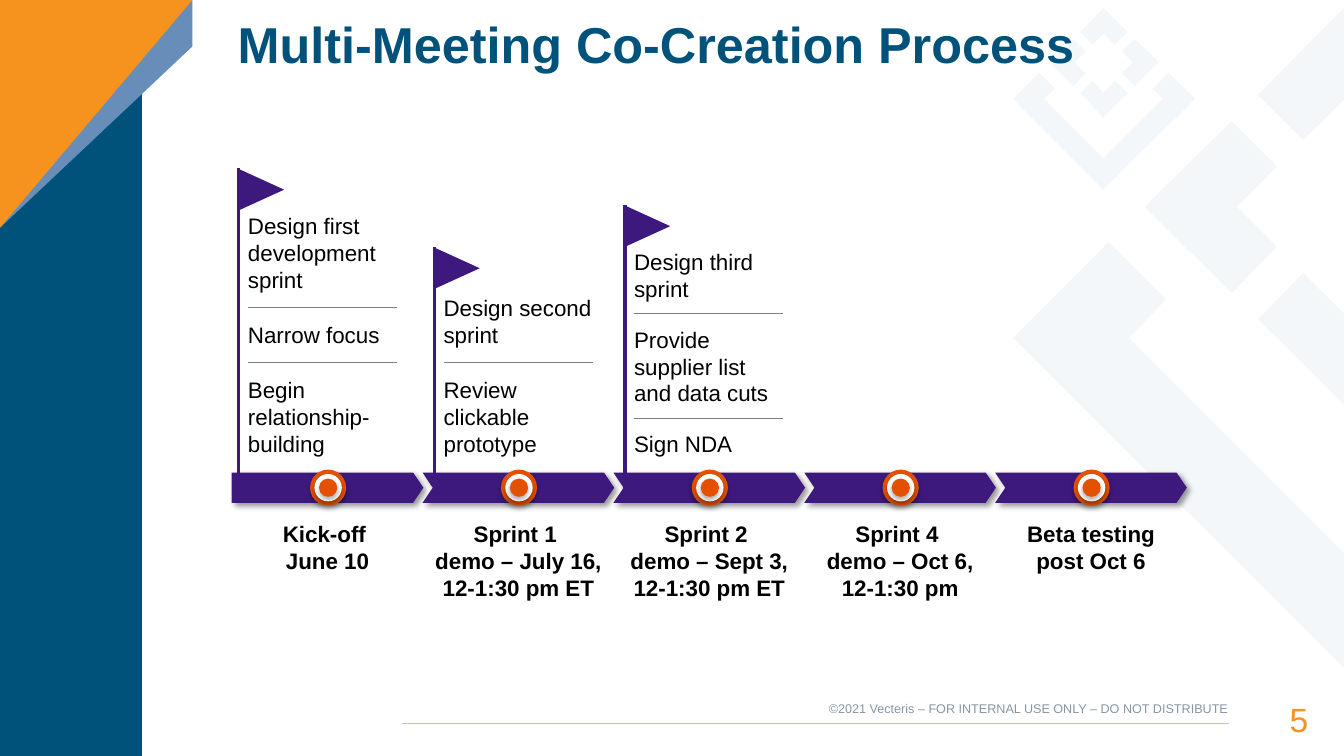
from lxml.etree import SubElement
from pptx import Presentation
from pptx.dml.color import RGBColor
from pptx.enum.shapes import MSO_CONNECTOR, MSO_SHAPE
from pptx.enum.text import MSO_ANCHOR, MSO_AUTO_SIZE, PP_ALIGN
from pptx.oxml import parse_xml
from pptx.oxml.ns import nsdecls, qn
from pptx.util import Cm, Pt

BLACK = RGBColor(0x00, 0x00, 0x00)
WHITE = RGBColor(0xFF, 0xFF, 0xFF)
NAVY = RGBColor(0x00, 0x52, 0x7B)
STEEL = RGBColor(0x66, 0x8E, 0xB8)
AMBER = RGBColor(0xF6, 0x92, 0x1E)
PALE = RGBColor(0xE9, 0xEE, 0xF4)
FOOTER_RULE = RGBColor(0xB3, 0xC6, 0xDC)
FOOTER_TEXT = RGBColor(0x87, 0x96, 0xA4)
PURPLE = RGBColor(0x3D, 0x19, 0x7D)
ORANGE = RGBColor(0xE3, 0x51, 0x00)
GREY = RGBColor(0x7F, 0x7F, 0x7F)

presentation = Presentation()
presentation.slide_width = Cm(33.87)
presentation.slide_height = Cm(19.05)
slide = presentation.slides.add_slide(presentation.slide_layouts[5])
shapes = slide.shapes


def write(box, text, size, color, align=PP_ALIGN.LEFT, bold=False):
    frame = box.text_frame
    frame.word_wrap = True
    frame.auto_size = MSO_AUTO_SIZE.NONE
    frame.margin_left = frame.margin_right = frame.margin_top = frame.margin_bottom = 0
    frame.text = text
    paragraph = frame.paragraphs[0]
    paragraph.alignment = align
    paragraph.font.name = "Arial"
    paragraph.font.size = Pt(size)
    paragraph.font.bold = bold
    paragraph.font.color.rgb = color
    return paragraph


def draw_line(x1, y1, x2, y2, color, width):
    line = shapes.add_connector(MSO_CONNECTOR.STRAIGHT, Cm(x1), Cm(y1), Cm(x2), Cm(y2))
    line.line.color.rgb = color
    line.line.width = Pt(width)
    SubElement(line._element.spPr, qn("a:effectLst"))


pale_pattern = [
    [(31.04, 3.05), (28.85, 5.21), (31.04, 7.39), (32.18, 6.22), (31.17, 5.21), (32.18, 4.19)],
    [(27.94, 6.1), (25.53, 8.51), (33.87, 16.84), (33.87, 13.94), (28.45, 8.51), (29.39, 7.54)],
    [(32.84, 6.88), (31.7, 8.05), (33.87, 10.21), (33.87, 7.9)],
    [(33.87, 0.2), (31.7, 2.39), (32.84, 3.53), (33.87, 2.51)],
    [(28.6, 0.99), (28.27, 1.3), (28.55, 1.57), (28.27, 1.85), (28.6, 2.18), (29.21, 1.57)],
    [(27.05, 0.99), (26.44, 1.57), (27.05, 2.18), (27.36, 1.85), (27.08, 1.57), (27.36, 1.3)],
    [(27.81, 0.2), (27.23, 0.81), (27.53, 1.12), (27.81, 0.84), (28.09, 1.12), (28.42, 0.81)],
    [(27.53, 2.03), (27.23, 2.36), (27.81, 2.97), (28.42, 2.36), (28.09, 2.03), (27.81, 2.34)],
    [(26.19, 1.83), (25.53, 2.49), (27.81, 4.78), (30.12, 2.49), (29.44, 1.83),
     (29.06, 2.24), (29.31, 2.49), (27.81, 3.99), (26.31, 2.49), (26.59, 2.24)],
]
backdrop = [(points, PALE) for points in pale_pattern] + [
    ([(0, 0), (3.58, 0), (3.58, 19.05), (0, 19.05)], NAVY),
    ([(0, 0), (4.85, 0), (4.85, 1.17), (0, 5.74)], STEEL),
    ([(0, 0), (4.85, 0), (0, 5.74)], AMBER),
]
for points, color in backdrop:
    corners = [(Cm(x), Cm(y)) for x, y in points]
    builder = shapes.build_freeform(*corners[0])
    builder.add_line_segments(corners[1:])
    panel = builder.convert_to_shape()
    panel.shadow.inherit = False
    panel.fill.solid()
    panel.fill.fore_color.rgb = color
    panel.line.fill.background()
    if color == PALE:
        tint = panel._element.spPr.find(qn("a:solidFill"))[0]
        SubElement(tint, qn("a:alpha")).set("val", "47000")

draw_line(10.13, 18.24, 30.96, 18.24, FOOTER_RULE, 0.82)
page_number = shapes.add_textbox(Cm(30.94), Cm(17.53), Cm(2.03), Cm(0.97))
write(page_number, "5", 24, AMBER, PP_ALIGN.RIGHT).line_spacing = 1.19
page_number.text_frame.vertical_anchor = MSO_ANCHOR.MIDDLE
copyright_line = shapes.add_textbox(Cm(20.12), Cm(17.65), Cm(10.82), Cm(0.38))
write(copyright_line, "©2021 Vecteris – FOR INTERNAL USE ONLY – DO NOT DISTRIBUTE",
      9, FOOTER_TEXT, PP_ALIGN.RIGHT)

title = shapes.title
title.left, title.top, title.width, title.height = Cm(5.99), Cm(0.33), Cm(27.86), Cm(1.73)
write(title, "Multi-Meeting Co-Creation Process", 36, NAVY, bold=True).line_spacing = 0.9
title.text_frame.vertical_anchor = MSO_ANCHOR.MIDDLE
shapes._spTree.append(title._element)

LINE_HEIGHT = 0.68
ITEM_WIDTH = 3.76
flags = [
    (6.02, 4.24, 0.71, [("Design first development sprint", 3), ("Narrow focus", 1),
                        ("Begin relationship-building", 3)]),
    (10.95, 6.22, 0.71, [("Design second sprint", 2), ("Review clickable prototype", 3)]),
    (15.75, 5.16, 0.6, [("Design third sprint", 2), ("Provide supplier list and data cuts", 3),
                        ("Sign NDA", 1)]),
]
for pole, pole_top, gap, items in flags:
    draw_line(pole, 12.32, pole, pole_top, PURPLE, 2.25)
    pennant = shapes.add_shape(MSO_SHAPE.ISOSCELES_TRIANGLE,
                               Cm(pole + 0.05), Cm(pole_top - 0.03), Cm(1.04), Cm(1.14))
    pennant.rotation = 90
    pennant.shadow.inherit = False
    pennant.fill.solid()
    pennant.fill.fore_color.rgb = PURPLE
    pennant.line.fill.background()

    item_left = pole + 0.23
    bottom = 11.53
    for position, (item, line_count) in enumerate(reversed(items)):
        if position:
            divider = bottom + gap / 2
            draw_line(item_left, divider, item_left + ITEM_WIDTH, divider, GREY, 0.75)
        height = line_count * LINE_HEIGHT
        item_box = shapes.add_textbox(Cm(item_left), Cm(bottom - height), Cm(ITEM_WIDTH), Cm(height))
        write(item_box, item, 16, BLACK)
        bottom -= height + gap

STAGE_PITCH = 4.81
stages = [
    "Kick-off \vJune 10",
    "Sprint 1 \vdemo – July 16, 12-1:30 pm ET",
    "Sprint 2 \vdemo – Sept 3, 12-1:30 pm ET",
    "Sprint 4 \vdemo – Oct 6, 12-1:30 pm",
    "Beta testing post Oct 6",
]
for index, stage in enumerate(stages):
    offset = index * STAGE_PITCH
    arrow = MSO_SHAPE.CHEVRON if index else MSO_SHAPE.PENTAGON
    parts = [(arrow, 5.84, 11.91, 4.83, 0.76, PURPLE, (40, 4, 3, 45))]
    for diameter, color in [(0.91, ORANGE), (0.69, WHITE), (0.46, ORANGE)]:
        parts.append((MSO_SHAPE.OVAL, 8.27 - diameter / 2, 12.29 - diameter / 2,
                      diameter, diameter, color, (31, 3.5, 2.2, 90)))
    for kind, left, top, width, height, color, (alpha, blur, distance, angle) in parts:
        part = shapes.add_shape(kind, Cm(left + offset), Cm(top), Cm(width), Cm(height))
        if kind == arrow:
            part.adjustments[0] = 0.337
        part.fill.solid()
        part.fill.fore_color.rgb = color
        part.line.fill.background()
        part._element.spPr.append(parse_xml(
            f'<a:effectLst {nsdecls("a")}><a:outerShdw blurRad="{Pt(blur)}" dist="{Pt(distance)}" '
            f'dir="{angle * 60000}" algn="ctr" rotWithShape="0"><a:srgbClr val="{BLACK}">'
            f'<a:alpha val="{alpha * 1000}"/></a:srgbClr></a:outerShdw></a:effectLst>'))
    label = shapes.add_textbox(Cm(6.02 + offset), Cm(13.11), Cm(4.47), Cm(3 * LINE_HEIGHT))
    write(label, stage, 16, BLACK, PP_ALIGN.CENTER, bold=True)

presentation.save("out.pptx")
